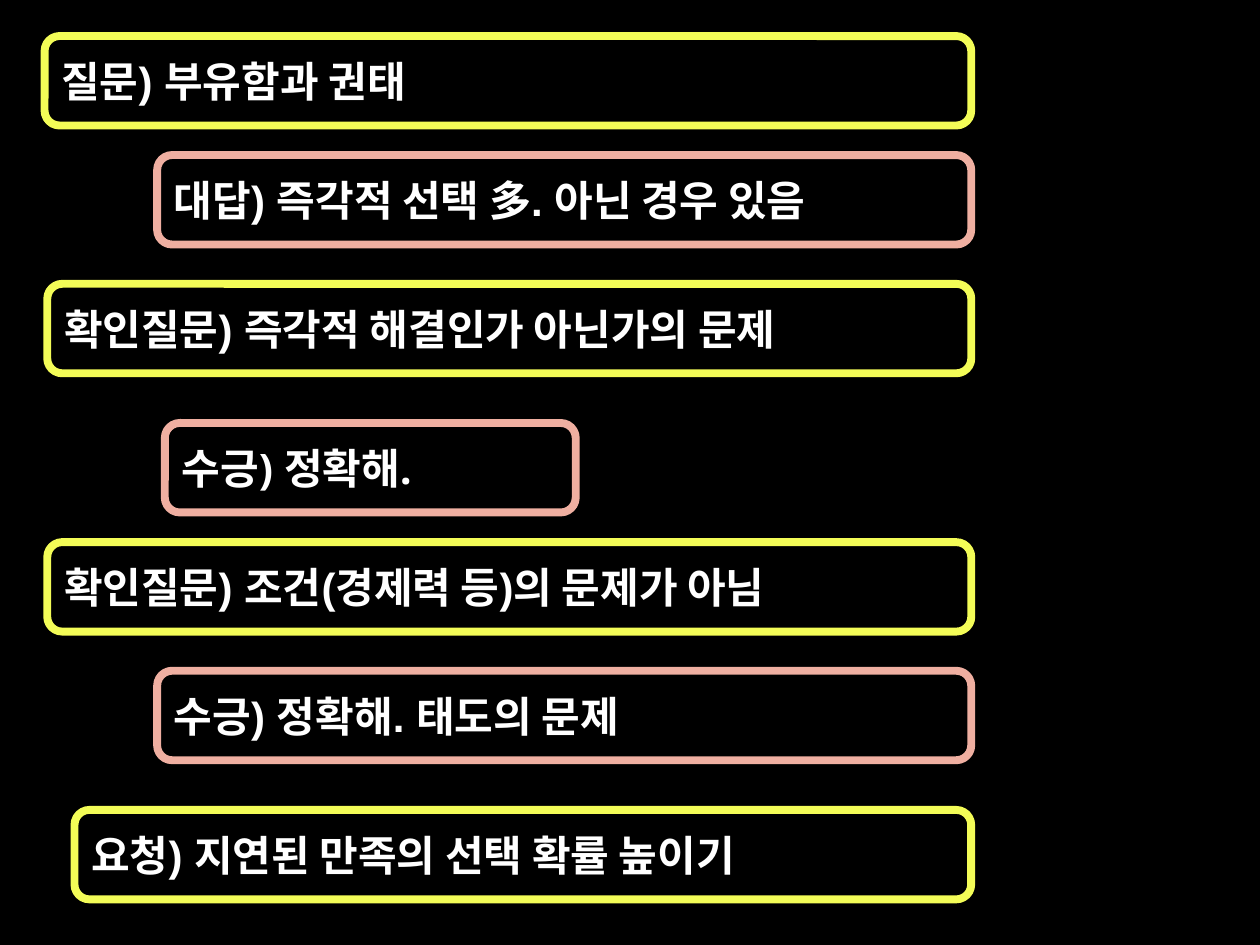
from typing import NamedTuple

from pptx import Presentation
from pptx.dml.color import RGBColor
from pptx.enum.shapes import MSO_SHAPE as Preset
from pptx.enum.text import MSO_ANCHOR as Anchor, PP_ALIGN as Align
from pptx.util import Pt

COLORS = {
    "background": "000000",
    "text": "FFFFFF",
    "coach": "F3FC57",
    "client": "EFAFA1",
}
BOX_HEIGHT = 51.1
RIGHT_EDGE = 555


class Remark(NamedTuple):
    speaker: str
    label: str
    content: str
    left: float
    top: float
    right: float = RIGHT_EDGE
    font: str = "Arial"


DIALOGUE = [
    Remark("coach", "질문) ", "부유함과 권태", 25.5, 20.6),
    Remark("client", "대답) ", "즉각적 선택 多. 아닌 경우 있음", 89.8, 88.6),
    Remark("coach", "확인질문) ", "즉각적 해결인가 아닌가의 문제", 27, 162.2),
    Remark("client", "수긍) ", "정확해.", 94.2, 241.7, 329, "Open Sans"),
    Remark("coach", "확인질문) ", "조건(경제력 등)의 문제가 아님", 27, 309.8),
    Remark("client", "수긍) ", "정확해. 태도의 문제", 89.8, 383.3),
    Remark("coach", "요청) ", "지연된 만족의 선택 확률 높이기", 42.6, 462.8),
]


def color(name: str) -> RGBColor:
    return RGBColor.from_string(COLORS[name])


def draw_remark(slide, remark: Remark) -> None:
    bubble = slide.shapes.add_shape(
        Preset.ROUNDED_RECTANGLE,
        Pt(remark.left), Pt(remark.top),
        Pt(remark.right - remark.left), Pt(BOX_HEIGHT),
    )
    bubble.shadow.inherit = False
    bubble.fill.background()
    bubble.line.color.rgb = color(remark.speaker)
    bubble.line.width = Pt(4.5)

    frame = bubble.text_frame
    frame.word_wrap = True
    frame.vertical_anchor = Anchor.MIDDLE
    sentence = frame.paragraphs[0]
    sentence.alignment = Align.LEFT
    run = sentence.add_run()
    run.text = remark.label + remark.content
    run.font.name = remark.font
    run.font.size = Pt(24)
    run.font.bold = True
    run.font.color.rgb = color("text")


def main() -> None:
    deck = Presentation()
    deck.slide_width, deck.slide_height = Pt(720), Pt(540)
    slide = deck.slides.add_slide(deck.slide_layouts[6])
    slide.background.fill.solid()
    slide.background.fill.fore_color.rgb = color("background")
    for remark in DIALOGUE:
        draw_remark(slide, remark)
    deck.save("out.pptx")


if __name__ == "__main__":
    main()
